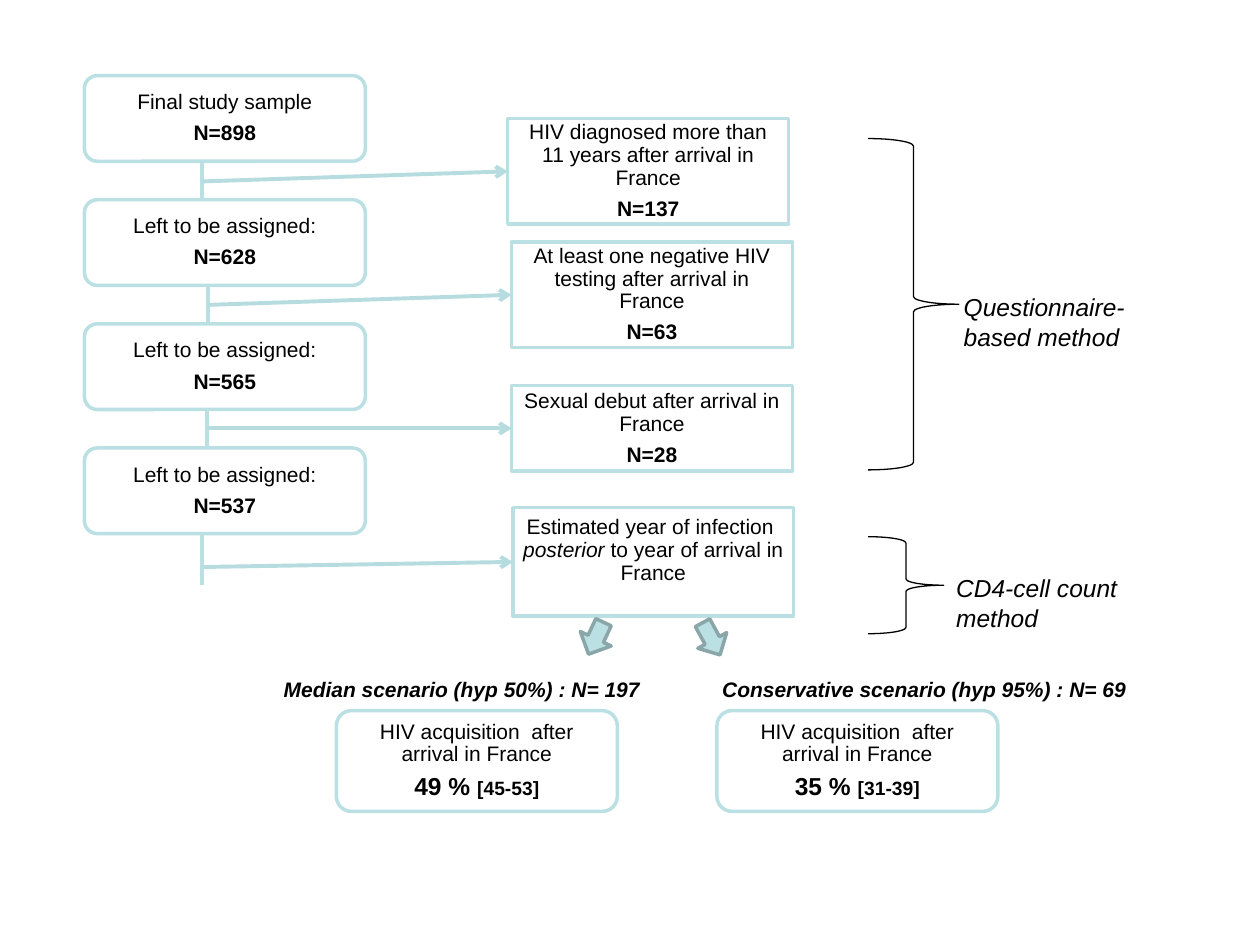
from lxml.etree import SubElement
from pptx import Presentation
from pptx.dml.color import RGBColor
from pptx.enum.shapes import MSO_CONNECTOR, MSO_SHAPE
from pptx.enum.text import MSO_ANCHOR, PP_ALIGN
from pptx.oxml.ns import qn
from pptx.util import Inches, Pt

BLACK = RGBColor(0x00, 0x00, 0x00)
WHITE = RGBColor(0xFF, 0xFF, 0xFF)
AQUA = RGBColor(0xBB, 0xE0, 0xE3)
ARROW_AQUA = RGBColor(0xB6, 0xDC, 0xDF)
GREY_AQUA = RGBColor(0x8A, 0xA6, 0xA8)

BOX_W, BOX_H = 2.23, 0.68


class FlowSlide:
    """Holds the text style and the slide being drawn."""

    font = "Arial"
    line_spacing = 0.9
    space_after = Pt(4.8)
    inset = Inches(0.07)

    def __init__(self, prs):
        self.slide = prs.slides.add_slide(prs.slide_layouts[6])
        self.shapes = self.slide.shapes

    def run(self, p, text, size=12, bold=False, italic=False):
        r = p.add_run()
        r.text = text
        r.font.name, r.font.size = self.font, Pt(size)
        r.font.bold, r.font.italic = bold, italic
        r.font.color.rgb = BLACK

    def shape(self, kind, x, y, w, h, fill=None, line=None, width=2):
        sp = self.shapes.add_shape(kind, Inches(x), Inches(y), Inches(w), Inches(h))
        sp.shadow.inherit = False
        if fill is None:
            sp.fill.background()
        else:
            sp.fill.solid()
            sp.fill.fore_color.rgb = fill
        if line is None:
            sp.line.fill.background()
        else:
            sp.line.color.rgb = line
            sp.line.width = Pt(width)
        return sp

    def box(self, x, y, h, paragraphs, rounded=False, anchor=MSO_ANCHOR.MIDDLE):
        """Each paragraph is a list of (text, font options) runs."""
        kind = MSO_SHAPE.ROUNDED_RECTANGLE if rounded else MSO_SHAPE.RECTANGLE
        sp = self.shape(kind, x, y, BOX_W, h, WHITE, AQUA)
        if rounded:
            sp.adjustments[0] = 0.15
        tf = sp.text_frame
        tf.word_wrap, tf.vertical_anchor = True, anchor
        tf.margin_left = tf.margin_right = tf.margin_top = tf.margin_bottom = self.inset
        for i, runs in enumerate(paragraphs):
            p = tf.add_paragraph() if i else tf.paragraphs[0]
            p.alignment = PP_ALIGN.CENTER
            p.line_spacing, p.space_after = self.line_spacing, self.space_after
            for text, style in runs:
                self.run(p, text, **style)

    def scenario(self, x, w, text):
        sp = self.shape(MSO_SHAPE.RECTANGLE, x, 5.14, w, 1.28, WHITE)
        tf = sp.text_frame
        tf.word_wrap, tf.vertical_anchor = True, MSO_ANCHOR.TOP
        tf.margin_top = Inches(0.23)
        p = tf.paragraphs[0]
        p.alignment = PP_ALIGN.RIGHT
        self.run(p, text, bold=True, italic=True)

    def label(self, x, y, w, text):
        tf = self.shapes.add_textbox(Inches(x), Inches(y), Inches(w), Inches(0.57)).text_frame
        tf.word_wrap = True
        self.run(tf.paragraphs[0], text, size=14, italic=True)

    def line(self, x1, y1, x2, y2, color=AQUA, arrow=False):
        c = self.shapes.add_connector(MSO_CONNECTOR.STRAIGHT, Inches(x1), Inches(y1),
                                      Inches(x2), Inches(y2))
        c.line.color.rgb, c.line.width = color, Pt(2.25)
        if arrow:
            SubElement(c.line._get_or_add_ln(), qn("a:tailEnd"), type="arrow")
        SubElement(c._element.spPr, qn("a:effectLst"))

    def block_arrow(self, x, y, w, h, angle):
        sp = self.shape(MSO_SHAPE.RIGHT_ARROW, x, y, w, h, AQUA, GREY_AQUA)
        sp.rotation = angle

    def brace(self, y, w, h):
        self.shape(MSO_SHAPE.RIGHT_BRACE, 6.89, y, w, h, line=BLACK, width=0.75)


def count(text, n):
    return [[(text, {})], [(f"N={n}", {"bold": True})]]


def main():
    prs = Presentation()
    prs.slide_width, prs.slide_height = Inches(10), Inches(7.5)
    s = FlowSlide(prs)

    # Scenario headings
    s.scenario(1.85, 3.33, "Median scenario (hyp 50%) : N= 197")
    s.scenario(5.28, 3.76, "Conservative scenario (hyp 95%) : N= 69")

    # Left column: remaining sample, with a stem under each box
    steps = [("Final study sample", 898, 1.6, 1.58), ("Left to be assigned:", 628, 1.65, 2.57),
             ("Left to be assigned:", 565, 1.64, 3.55), ("Left to be assigned:", 537, 1.6, 4.64)]
    for i, (text, n, stem_x, stem_end) in enumerate(steps):
        top = 0.6 + 0.985 * i
        s.line(stem_x, top + BOX_H, stem_x, stem_end)
        s.box(0.67, top, BOX_H, count(text, n), rounded=True)

    # Middle column: assigned cases
    s.box(4.03, 0.94, 0.84, count("HIV diagnosed more than 11 years after arrival in France", 137))
    s.box(4.06, 1.92, 0.84, count("At least one negative HIV testing after arrival in France", 63))
    s.box(4.06, 3.06, BOX_H, count("Sexual debut after arrival in France", 28))
    s.box(4.07, 4.03, 0.86, [[("Estimated year of infection  ", {}),
                              ("posterior", {"italic": True}),
                              (" to year of arrival in France", {})]], anchor=MSO_ANCHOR.TOP)

    # Arrows from the stems to the assigned cases
    for x1, y1, x2, y2 in [(1.61, 1.44, 4.03, 1.36), (1.65, 2.42, 4.06, 2.34),
                           (1.64, 3.4, 4.06, 3.4), (1.61, 4.5, 4.07, 4.46)]:
        s.line(x1, y1, x2, y2, ARROW_AQUA, arrow=True)

    # Methods
    s.brace(1.1, 0.72, 2.63)
    s.label(7.55, 2.27, 1.48, "Questionnaire-based method")
    s.brace(4.26, 0.6, 0.77)
    s.label(7.49, 4.5, 1.92, "CD4-cell count method")

    # Results of the two scenarios
    for x, share, interval in [(2.67, "49 % ", "[45-53]"), (5.69, "35 % ", "[31-39]")]:
        s.box(x, 5.64, 0.8, [[("HIV acquisition  after arrival in France", {})],
                             [(share, {"size": 14, "bold": True}),
                              (interval, {"size": 11, "bold": True})]], rounded=True)
    s.block_arrow(4.59, 4.93, 0.28, 0.27, 115.1)
    s.block_arrow(5.5, 4.94, 0.29, 0.26, 61.5)

    prs.save("out.pptx")


if __name__ == "__main__":
    main()
